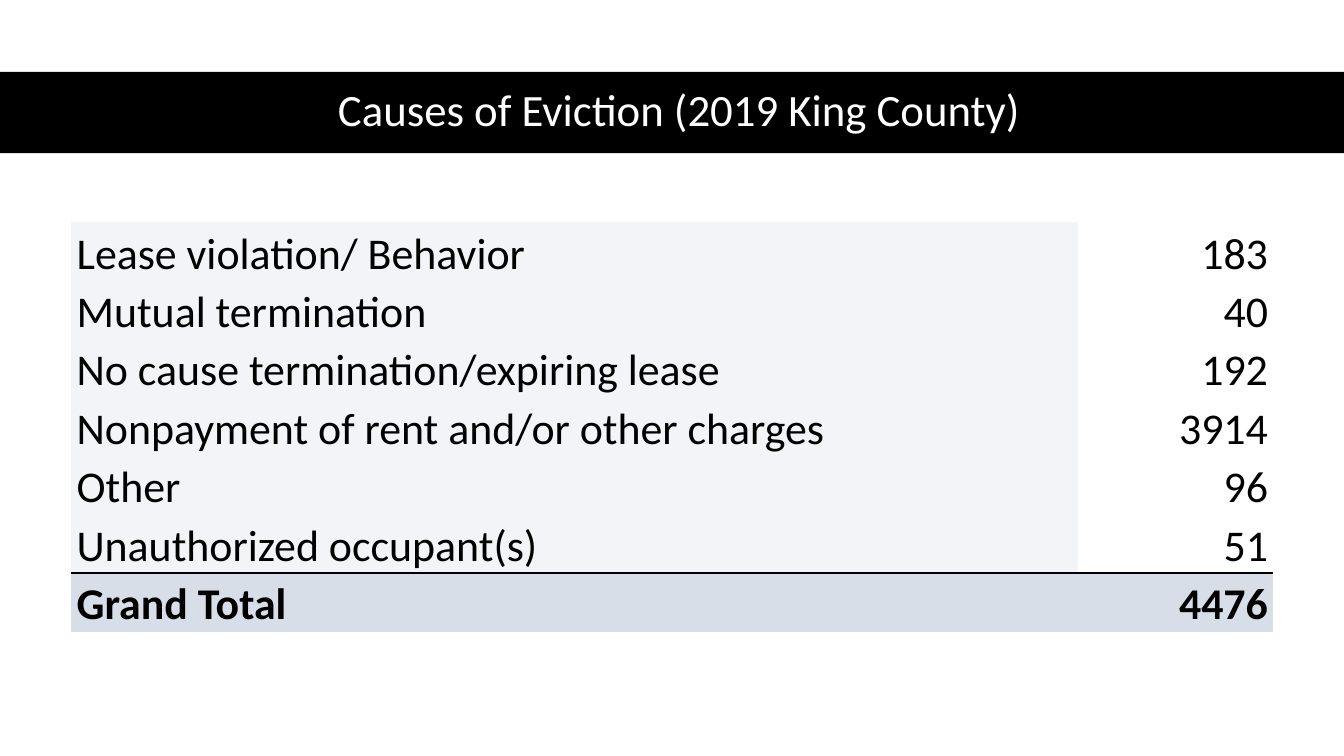
import pptx
import pptx.util
import pptx.dml.color
import pptx.enum.shapes
import pptx.enum.text
import pptx.oxml
import pptx.oxml.ns

Inches = pptx.util.Inches
ALIGN = pptx.enum.text.PP_ALIGN
ANCHOR = pptx.enum.text.MSO_ANCHOR
PLAIN = "{2D5ABB26-0587-4C30-8999-92F81FD0307C}"  # table style without lines

CAUSES = [
    ("Lease violation/ Behavior", 183),
    ("Mutual termination", 40),
    ("No cause termination/expiring lease", 192),
    ("Nonpayment of rent and/or other charges", 3914),
    ("Other", 96),
    ("Unauthorized occupant(s)", 51),
    ("Grand Total", 4476),
]


def color(code):
    return pptx.dml.color.RGBColor.from_string(code)


def apply(item, values):
    for name, value in values.items():
        setattr(item, name, value)


class Deck:
    font = "Calibri"
    black, white = "000000", "FFFFFF"
    pale, total = "F2F4F7", "D8DEE8"

    def __init__(self, wide, high):
        self.file = pptx.Presentation()
        apply(self.file, {"slide_width": Inches(wide), "slide_height": Inches(high)})
        self.slide = self.file.slides.add_slide(self.file.slide_layouts[5])

    def label(self, frame, text, size, tint, align, bold=False):
        frame.text = text
        line = frame.paragraphs[0]
        line.alignment = align
        font = line.runs[0].font
        apply(font, {"name": self.font, "size": pptx.util.Pt(size), "bold": bold})
        font.color.rgb = color(tint)
        return line

    def band(self, *box):
        kind = pptx.enum.shapes.MSO_SHAPE.RECTANGLE
        shape = self.slide.shapes.add_shape(kind, *map(Inches, box))
        shape.shadow.inherit = False
        shape.fill.solid()
        shape.fill.fore_color.rgb = color(self.black)
        shape.line.fill.background()

    def title(self, text, *box):
        shape = self.slide.shapes.title
        apply(shape, dict(zip(("left", "top", "width", "height"), map(Inches, box))))
        frame = shape.text_frame
        apply(frame, {
            "word_wrap": True, "vertical_anchor": ANCHOR.MIDDLE,
            "auto_size": pptx.enum.text.MSO_AUTO_SIZE.NONE,
            "margin_left": Inches(0.15), "margin_right": Inches(0.15),
            "margin_top": Inches(0.07), "margin_bottom": Inches(0.07),
        })
        self.label(frame, text, 48, self.white, ALIGN.CENTER).line_spacing = 0.9
        # Bring the title in front of the band
        self.slide.shapes.element.append(shape.element)

    def edge(self, cell, side, tint, width):
        space = pptx.oxml.ns.nsdecls("a")
        cell._tc.get_or_add_tcPr().append(pptx.oxml.parse_xml(
            f'<a:ln{side} {space} w="{pptx.util.Pt(width)}"><a:solidFill>'
            f'<a:srgbClr val="{tint}"/></a:solidFill></a:ln{side}>'))

    def table(self, data, left, top, widths, high):
        last = len(data) - 1
        frame = self.slide.shapes.add_table(
            len(data), len(widths), Inches(left), Inches(top),
            Inches(sum(widths)), Inches(high * len(data)))
        grid = frame.table
        apply(grid, {"first_row": False, "horz_banding": False})
        style = pptx.oxml.ns.qn("a:tableStyleId")
        next(frame.element.iter(style)).text = PLAIN
        for col, width in zip(grid.columns, widths):
            col.width = Inches(width)
        for r, row in enumerate(data):
            grid.rows[r].height = Inches(high)
            for c, value in enumerate(row):
                cell = grid.cell(r, c)
                apply(cell, {
                    "vertical_anchor": ANCHOR.BOTTOM,
                    "margin_left": Inches(0.08), "margin_right": Inches(0.08),
                    "margin_top": 0, "margin_bottom": 0,
                })
                self.label(cell.text_frame, str(value), 47, self.black,
                           (ALIGN.LEFT, ALIGN.RIGHT)[c], r == last)
                # Lines: white between the columns, black above the total
                if r < last:
                    self.edge(cell, "RL"[c], self.white, 0.75)
                if r == last:
                    self.edge(cell, "T", self.black, 2.25)
                elif r == last - 1:
                    self.edge(cell, "B", self.black, 2.25)
                cell.fill.solid()
                tint = self.total if r == last else (self.pale, self.white)[c]
                cell.fill.fore_color.rgb = color(tint)


def main():
    deck = Deck(20, 11.25)
    # Heading
    deck.band(0, 1.07, 20, 1.21)
    deck.title("Causes of Eviction (2019 King County)", 0.91, 1.06, 18.39, 1.22)
    # Counts by cause
    deck.table(CAUSES, 1.06, 3.31, (14.99, 2.9), 0.87)
    deck.file.save("out.pptx")


if __name__ == "__main__":
    main()
